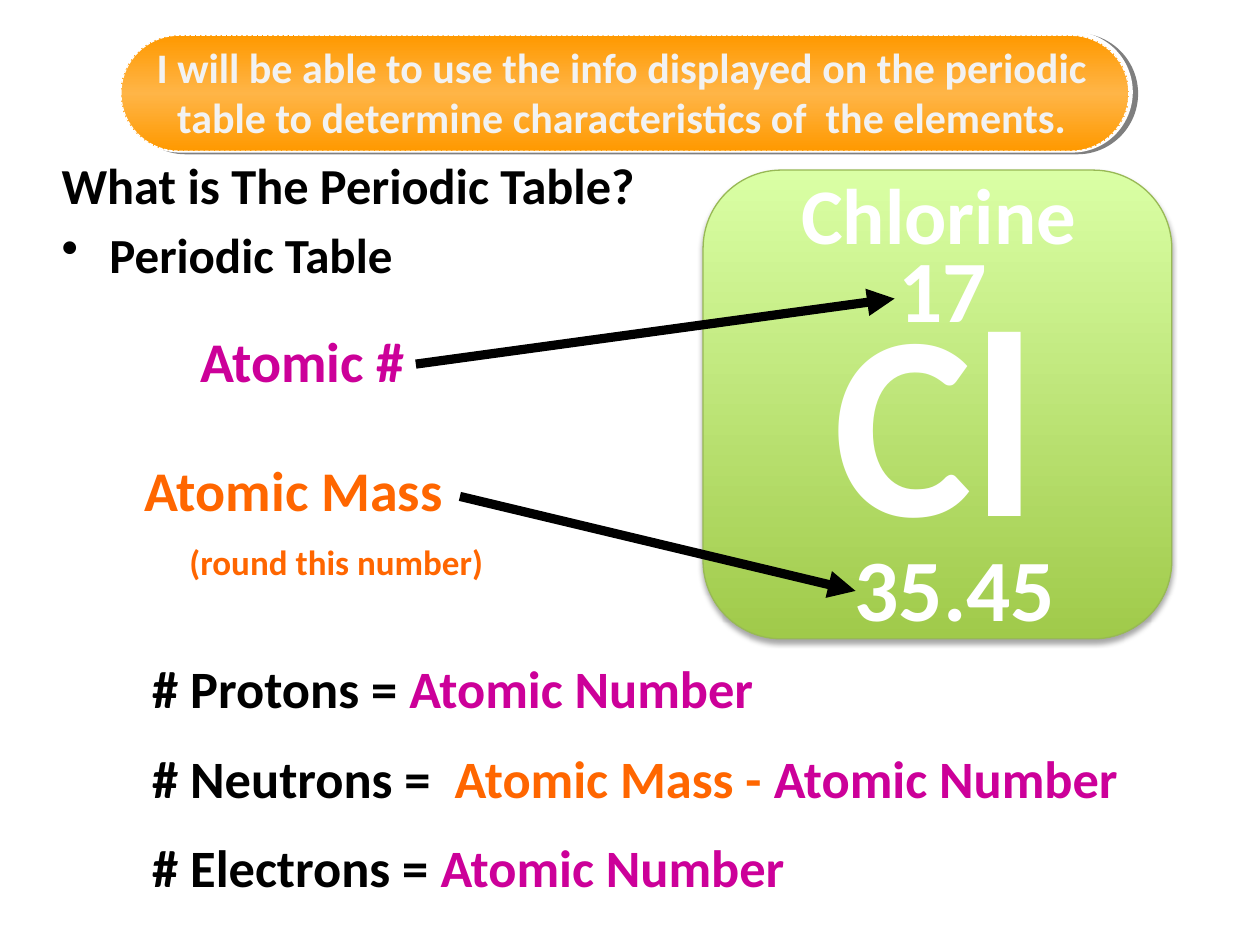
from lxml.etree import SubElement
from pptx import Presentation
from pptx.dml.color import RGBColor
from pptx.enum.dml import MSO_LINE
from pptx.enum.shapes import MSO_CONNECTOR, MSO_SHAPE
from pptx.enum.text import MSO_ANCHOR, PP_ALIGN
from pptx.oxml.ns import qn
from pptx.util import Inches, Pt

COLORS = {
    "black": "000000", "white": "FFFFFF", "pale": "F2F2F2",
    "pink": "CC0099", "orange": "FF6600", "amber": "FF9900",
    "peach": "FFB547", "lime": "DAFFA5", "green": "A0CA4A", "rim": "98B955",
}
GOAL = ("I will be able to use the info displayed on the periodic table "
        "to determine characteristics of  the elements.")
CELL = [
    ("Chlorine", 45, (6.25, 1.27, 2.4, 0.86)),
    ("35.45", 50, (6.68, 4.19, 1.8, 0.94)),
    ("17", 50, (7.03, 1.82, 0.91, 0.94)),
    ("Cl", 150, (6.51, 1.97, 1.83, 2.63)),
]
ARROWS = [((3.3, 2.89), (7.1, 2.37)), ((3.65, 3.94), (6.79, 4.69))]
NUMBER = ("Atomic Number", "pink")
RULES = [
    [("# Protons = ", "black"), NUMBER],
    [("# Neutrons =  ", "black"), ("Atomic Mass - ", "orange"), NUMBER],
    [("# Electrons = ", "black"), NUMBER],
]

deck = Presentation()
deck.slide_width, deck.slide_height = Inches(10), Inches(7.5)
slide = deck.slides.add_slide(deck.slide_layouts[6])


def rgb(name):
    return RGBColor.from_string(COLORS[name])


def add_pill(box, round_by, stops, edge, width, shadow=None):
    pill = slide.shapes.add_shape(MSO_SHAPE.ROUNDED_RECTANGLE, *map(Inches, box))
    pill.adjustments[0] = round_by
    pill.line.color.rgb = rgb(edge)
    pill.line.width = Pt(width)
    pill.shadow.inherit = False
    props = pill._element.spPr
    if len(stops) == 1:
        pill.fill.solid()
        pill.fill.fore_color.rgb = rgb(stops[0])
    else:
        pill.fill.gradient()
        pill.fill.gradient_angle = 270
        ramp = props.find(qn("a:gradFill")).find(qn("a:gsLst"))
        for stop in list(ramp):
            ramp.remove(stop)
        for i, name in enumerate(stops):
            stop = SubElement(ramp, qn("a:gs"), pos=str(100000 * i // (len(stops) - 1)))
            SubElement(stop, qn("a:srgbClr"), val=COLORS[name])
    if shadow:
        alpha, blur, dist, angle = shadow
        cast = SubElement(props.find(qn("a:effectLst")), qn("a:outerShdw"),
                          blurRad=str(Pt(blur)), dist=str(Pt(dist)),
                          dir=str(angle * 60000), algn="ctr", rotWithShape="0")
        tint = SubElement(cast, qn("a:srgbClr"), val=COLORS["black"])
        SubElement(tint, qn("a:alpha"), val=str(alpha * 1000))
    return pill


def add_text(box, lines, wrap=True, anchor=MSO_ANCHOR.TOP):
    frame = slide.shapes.add_textbox(*map(Inches, box)).text_frame
    frame.word_wrap = wrap
    frame.vertical_anchor = anchor
    for i, (runs, size, align) in enumerate(lines):
        para = frame.paragraphs[0] if i == 0 else frame.add_paragraph()
        para.alignment = align
        if i:
            para.space_before = Pt(size / 2)
        for text, color in runs:
            run = para.add_run()
            run.text = text
            run.font.color.rgb = rgb(color)
        para.font.name, para.font.size, para.font.bold = "Calibri", Pt(size), True
    return frame


def add_bullet(para):
    props = para._p.get_or_add_pPr()
    props.set("marL", str(Inches(0.38)))
    props.set("indent", str(Inches(-0.38)))
    mark = SubElement(props, qn("a:buChar"), char="•")
    props.remove(mark)
    props.insert(0, mark)


def add_arrow(start, end):
    arrow = slide.shapes.add_connector(
        MSO_CONNECTOR.STRAIGHT, *map(Inches, start + end))
    arrow.line.color.rgb = rgb("black")
    arrow.line.width = Pt(5.25)
    SubElement(arrow.line._get_or_add_ln(), qn("a:tailEnd"), type="triangle")
    SubElement(arrow._element.spPr, qn("a:effectLst"))


left, mid = PP_ALIGN.LEFT, PP_ALIGN.CENTER

add_pill((0.97, 0.27, 8, 0.92), 0.5, ["white"], "white", 3, (50, 0, 3.2, 18))
banner = add_pill((0.96, 0.28, 8, 0.92), 0.5, ["amber", "peach", "amber"], "white", 0.75)
banner.line.dash_style = MSO_LINE.SQUARE_DOT
add_text((0.39, 1.19, 9.11, 0.54),
         [([("What is The Periodic Table?", "black")], 28.8, left)],
         anchor=MSO_ANCHOR.MIDDLE)
topic = add_text((0.39, 1.73, 4.62, 0.6), [([("Periodic Table", "black")], 28, left)])
add_bullet(topic.paragraphs[0])
add_text((1.01, 0.28, 7.85, 0.92), [([(GOAL, "pale")], 24, mid)])

add_pill((5.58, 1.35, 3.72, 3.72), 0.167, ["lime", "green"], "rim", 0.75,
         (35, 3.1, 1.8, 90))
for text, size, box in CELL:
    add_text(box, [([(text, "white")], size, mid)], wrap=False)

add_text((1.49, 2.54, 2.16, 0.63), [([("Atomic #", "pink")], 32, left)])
add_text((1.05, 3.57, 3.24, 1.14), [
    ([("Atomic Mass", "orange")], 32, left),
    ([("(round this number)", "orange")], 20, mid),
])
add_text((1.11, 5.16, 8.7, 2.1), [(runs, 30, left) for runs in RULES])
for start, end in ARROWS:
    add_arrow(start, end)

deck.save("out.pptx")
